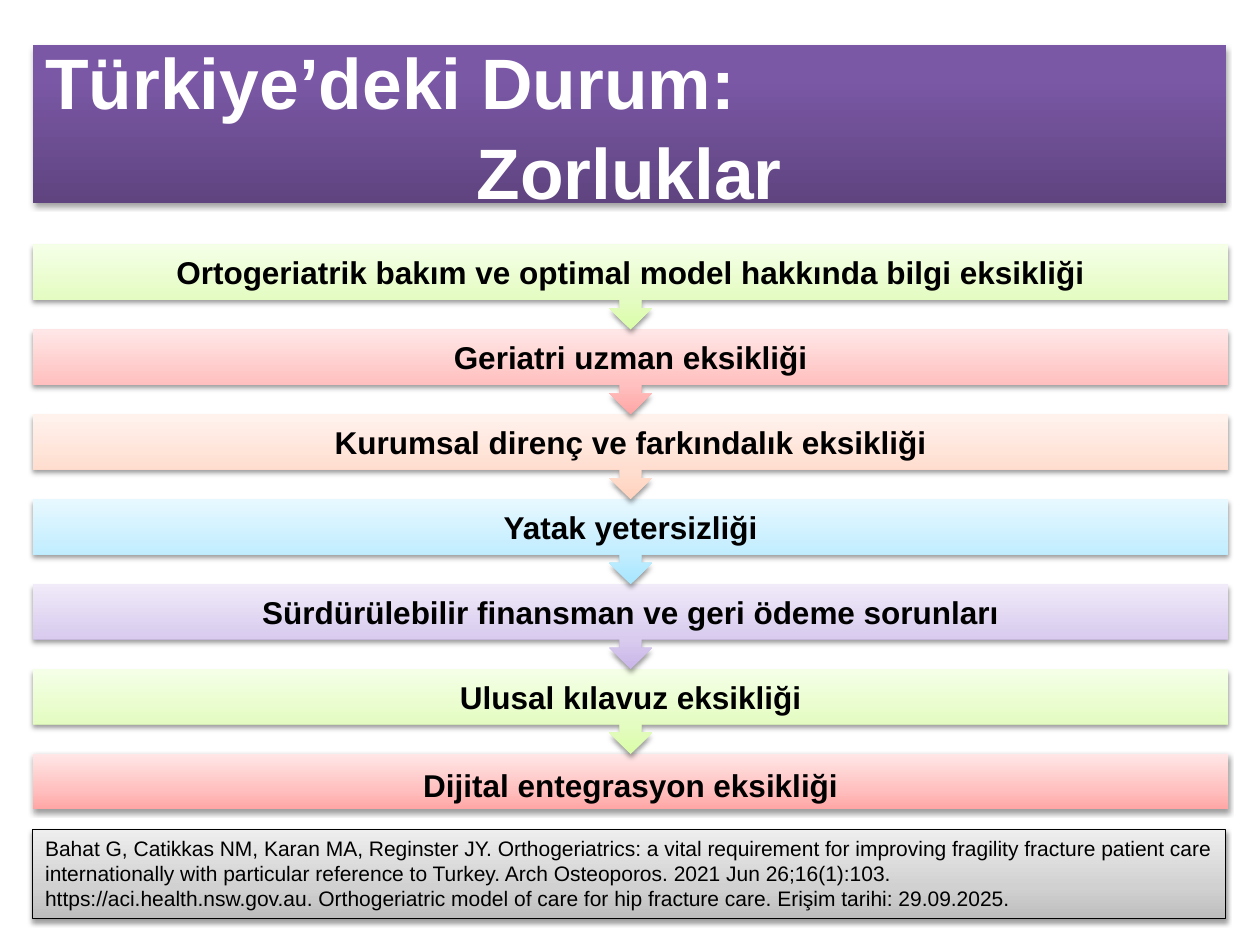
from copy import deepcopy
from dataclasses import dataclass

from lxml import etree
from pptx import Presentation
from pptx.dml.color import RGBColor
from pptx.enum.shapes import MSO_SHAPE
from pptx.enum.text import MSO_ANCHOR, MSO_AUTO_SIZE, PP_ALIGN
from pptx.oxml.ns import qn
from pptx.shapes.autoshape import Shape
from pptx.util import Pt

BOX, CALL = MSO_SHAPE.RECTANGLE, MSO_SHAPE.DOWN_ARROW_CALLOUT
LEFT, MID = PP_ALIGN.LEFT, PP_ALIGN.CENTER
TOP, CENTRE = MSO_ANCHOR.TOP, MSO_ANCHOR.MIDDLE
FIXED = MSO_AUTO_SIZE.NONE

Blend = tuple[tuple[int, str], ...]


@dataclass(frozen=True)
class Theme:
    font: str = "Arial"
    head: float = 40.8
    step: float = 18
    note: float = 12
    dark: str = "000000"
    light: str = "FFFFFF"
    title: Blend = ((0, "5F4480"), (80, "7B58A6"), (100, "7C57A8"))
    grey: Blend = ((0, "BDBDBD"), (35, "D1D1D1"), (100, "EEEEEE"))
    green: Blend = ((0, "DAFDA7"), (35, "E4FCC2"), (100, "F5FFE7"))
    red: Blend = ((0, "FFA6A5"), (35, "FFC0BF"), (100, "FFE7E7"))
    peach: Blend = ((0, "FFD2BD"), (35, "FFDED0"), (100, "FFF2ED"))
    blue: Blend = ((0, "A7E6FF"), (35, "C1EDFF"), (100, "E7F8FF"))
    mauve: Blend = ((0, "C9B5E8"), (35, "D8CBEE"), (100, "F0EAF9"))


@dataclass(frozen=True)
class Step:
    text: str
    blend: Blend


@dataclass(frozen=True)
class Line:
    text: str
    align: PP_ALIGN = LEFT


THEME = Theme()
EDGE, WIDE, SPAN = 18.7, 681.8, 683.3
FIRST, PITCH, CALL_H, BOX_H = 139.7, 48.5, 48.6, 31.8

HEAD = [Line("Türkiye’deki Durum:"), Line("Zorluklar", MID)]
STEPS = [
    Step("Ortogeriatrik bakım ve optimal model hakkında bilgi eksikliği", THEME.green),
    Step("Geriatri uzman eksikliği", THEME.red),
    Step("Kurumsal direnç ve farkındalık eksikliği", THEME.peach),
    Step("Yatak yetersizliği", THEME.blue),
    Step("Sürdürülebilir finansman ve geri ödeme sorunları", THEME.mauve),
    Step("Ulusal kılavuz eksikliği", THEME.green),
    Step("Dijital entegrasyon eksikliği", THEME.red),
]
NOTES = [
    Line("Bahat G, Catikkas NM, Karan MA, Reginster JY. Orthogeriatrics: a vital "
         "requirement for improving fragility fracture patient care internationally "
         "with particular reference to Turkey. Arch Osteoporos. 2021 Jun 26;16(1):103."),
    Line("https://aci.health.nsw.gov.au. Orthogeriatric model of care for hip "
         "fracture care. Erişim tarihi: 29.09.2025."),
]


def assign(item: object, values: dict) -> None:
    for name, value in values.items():
        setattr(item, name, value)


def shade(shape: Shape, blend: Blend) -> None:
    """Fill with a bottom-to-top gradient and drop a soft shadow below."""
    fill = shape.fill
    fill.gradient()
    fill.gradient_angle = 90
    stops = next(shape.element.spPr.iter(qn("a:gsLst")))
    stops.append(deepcopy(stops[0]))
    for stop, (place, color) in zip(fill.gradient_stops, blend):
        stop.position = place / 100
        stop.color.rgb = RGBColor.from_string(color)
    shape.line.fill.background()
    shape.shadow.inherit = False
    effects = shape.element.spPr.find(qn("a:effectLst"))
    shadow = etree.SubElement(effects, qn("a:outerShdw"), blurRad=str(Pt(3.1)),
                              dist=str(Pt(1.6)), dir="5400000", rotWithShape="0")
    color = etree.SubElement(shadow, qn("a:srgbClr"), val=THEME.dark)
    etree.SubElement(color, qn("a:alpha"), val="38000")


def write(shape: Shape, lines: list[Line], size: float, color: str,
          bold: bool = True, **frame: object) -> None:
    box = shape.text_frame
    assign(box, {"word_wrap": True, "auto_size": FIXED,
                 "vertical_anchor": CENTRE, **frame})
    for index, line in enumerate(lines):
        para = box.add_paragraph() if index else box.paragraphs[0]
        para.alignment = line.align
        run = para.add_run()
        run.text = line.text
        assign(run.font, {"name": THEME.font, "size": Pt(size), "bold": bold})
        run.font.color.rgb = RGBColor.from_string(color)


def main() -> None:
    deck = Presentation()
    assign(deck, {"slide_width": Pt(720), "slide_height": Pt(540)})
    slide = deck.slides.add_slide(deck.slide_layouts[5])

    title = slide.shapes.title
    assign(title, {"left": Pt(EDGE), "top": Pt(26), "width": Pt(WIDE), "height": Pt(90)})
    shade(title, THEME.title)
    write(title, HEAD, THEME.head, THEME.light)
    for para in title.text_frame.paragraphs:
        assign(para, {"line_spacing": 1.05, "space_before": Pt(0)})

    note = slide.shapes.add_shape(BOX, Pt(EDGE), Pt(473.8), Pt(WIDE), Pt(51))
    shade(note, THEME.grey)
    note.line.color.rgb = RGBColor.from_string(THEME.dark)
    note.line.width = Pt(0.75)
    write(note, NOTES, THEME.note, THEME.dark, bold=False, vertical_anchor=TOP)

    last = len(STEPS) - 1
    for index, step in reversed(list(enumerate(STEPS))):
        kind, tall, drop = (BOX, BOX_H, 4) if index == last else (CALL, CALL_H, 0)
        shape = slide.shapes.add_shape(kind, Pt(EDGE), Pt(FIRST + index * PITCH),
                                       Pt(SPAN), Pt(tall))
        shade(shape, step.blend)
        write(shape, [Line(step.text, MID)], THEME.step, THEME.dark,
              margin_top=Pt(drop), margin_bottom=Pt(0))

    deck.save("out.pptx")


if __name__ == "__main__":
    main()
